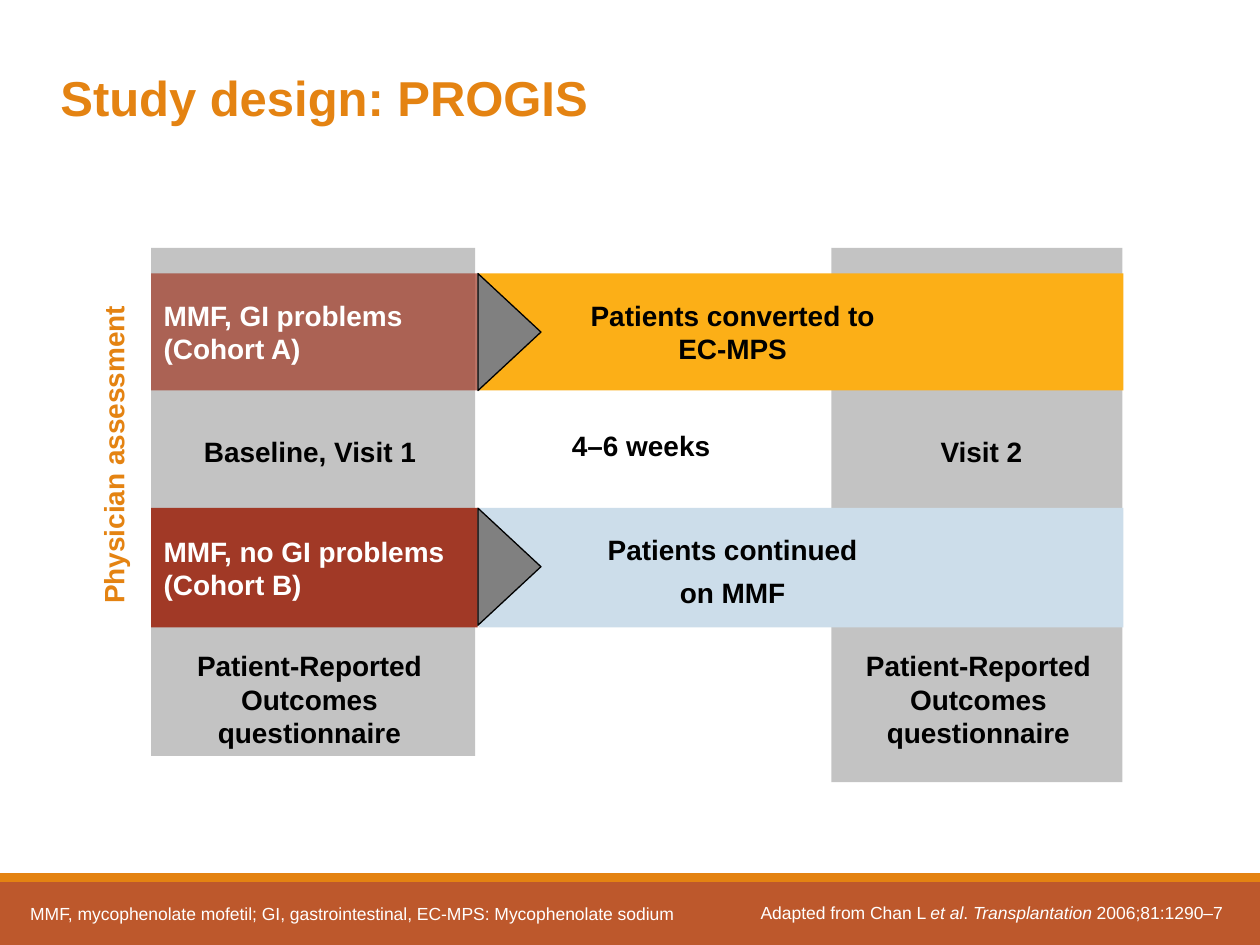
from lxml import etree
from pptx import Presentation
from pptx.dml.color import RGBColor
from pptx.enum.shapes import MSO_SHAPE
from pptx.enum.text import MSO_ANCHOR, PP_ALIGN
from pptx.oxml.ns import qn
from pptx.util import Cm, Pt

RECT, TRIANGLE = MSO_SHAPE.RECTANGLE, MSO_SHAPE.ISOSCELES_TRIANGLE
TOP, MIDDLE = MSO_ANCHOR.TOP, MSO_ANCHOR.MIDDLE
LEFT, CENTER, RIGHT = PP_ALIGN.LEFT, PP_ALIGN.CENTER, PP_ALIGN.RIGHT

COLORS = {
    "orange": "E48312", "footer": "BD582C", "grey": "808080", "red": "A13926",
    "amber": "FCAF17", "blue": "CCDDEA", "white": "FFFFFF", "black": "000000",
}


def add_box(x, y, w, h, color, kind=RECT, opacity=100):
    sp = s.shapes.add_shape(kind, Cm(x), Cm(y), Cm(w), Cm(h))
    sp.shadow.inherit = False
    sp.fill.solid()
    sp.fill.fore_color.rgb = RGBColor.from_string(COLORS[color])
    sp.line.fill.background()
    if opacity < 100:
        clr = sp.fill._xPr.find(qn("a:solidFill"))[0]
        etree.SubElement(clr, qn("a:alpha"), val=str(opacity * 1000))
    return sp


def write(sp, text, size=16, color="black", bold=True, align=CENTER,
          anchor=TOP, spacing=None, before=0):
    """Fill a shape: one list item per paragraph, * toggles italics."""
    tf = sp.text_frame
    tf.word_wrap = True
    tf.vertical_anchor = anchor
    for i, line in enumerate([text] if isinstance(text, str) else text):
        p = tf.add_paragraph() if i else tf.paragraphs[0]
        p.alignment = align
        if spacing:
            p.line_spacing = spacing
        if i and before:
            p.space_before = Pt(before)
        for j, part in enumerate(line.split("*")):
            for k, piece in enumerate(part.split("\n")):
                if k:
                    p.add_line_break()
                r = p.add_run()
                r.text = piece
                r.font.name = "Arial"
                r.font.size = Pt(size)
                r.font.bold = bold
                r.font.italic = j % 2 == 1
                r.font.color.rgb = RGBColor.from_string(COLORS[color])


prs = Presentation()
prs.slide_width, prs.slide_height = Cm(25.4), Cm(19.05)
s = prs.slides.add_slide(prs.slide_layouts[6])

# Footer band
add_box(0, 17.78, 25.4, 1.27, "footer")
add_box(0, 17.6, 25.4, 0.18, "orange")

# Visit columns
add_box(3.05, 5, 6.53, 10.24, "grey", opacity=47)
add_box(16.76, 5, 5.87, 10.77, "grey", opacity=47)

# Cohort rows: group on the left, treatment on the right, arrow between
cohorts = [
    (5.51, 2.36, "MMF, GI problems\n(Cohort A)", 70, "amber"),
    (10.24, 2.41, "MMF, no GI problems\n(Cohort B)", 100, "blue"),
]
for y, h, label, opacity, color in cohorts:
    add_box(9.65, y, 13, h, color)
    group = add_box(3.05, y, 6.58, h, "red", opacity=opacity)
    write(group, label, color="white", align=LEFT, anchor=MIDDLE)
    arrow = add_box(9.09, y + 0.55, 2.36, 1.27, "grey", kind=TRIANGLE)
    arrow.rotation = 90
    arrow.line.color.rgb = RGBColor.from_string(COLORS["black"])
    arrow.line.width = Pt(0.75)

# Text boxes: position, text, format
questionnaire = "Patient-Reported Outcomes\nquestionnaire"
labels = [
    (0.97, 1.07, 22.86, 1.78, "Study design: PROGIS",
     dict(size=28, color="orange", align=LEFT, anchor=MIDDLE)),
    (3.05, 8.64, 6.4, 0.94, "Baseline, Visit 1", {}),
    (16.94, 8.64, 5.69, 0.94, "Visit 2", {}),
    (3.05, 12.95, 6.38, 2.29, questionnaire, {}),
    (16.69, 12.95, 6.07, 2.29, questionnaire, {}),
    (11.28, 8.51, 3.63, 0.94, "4–6 weeks", dict(align=LEFT)),
    (10.67, 5.86, 8.2, 1.66, ["Patients converted to", "EC-MPS"],
     dict(anchor=MIDDLE)),
    (10.67, 10.74, 8.2, 1.7, ["Patients continued", "on MMF"],
     dict(spacing=0.8, before=9.2)),
    (0.36, 18.08, 14.53, 0.69,
     "MMF, mycophenolate mofetil; GI, gastrointestinal, "
     "EC-MPS: Mycophenolate sodium",
     dict(size=10, color="white", bold=False, align=LEFT)),
    (14.9, 18.06, 10, 0.71,
     "Adapted from Chan L *et al*. *Transplantation* 2006;81:1290–7",
     dict(size=10, color="white", bold=False, align=RIGHT)),
]
for x, y, w, h, text, style in labels:
    write(s.shapes.add_textbox(Cm(x), Cm(y), Cm(w), Cm(h)), text, **style)

# Vertical side label
side = s.shapes.add_textbox(Cm(-1.7), Cm(8.7), Cm(7.98), Cm(0.94))
side.rotation = 270
write(side, "Physician assessment", color="orange")

prs.save("out.pptx")
